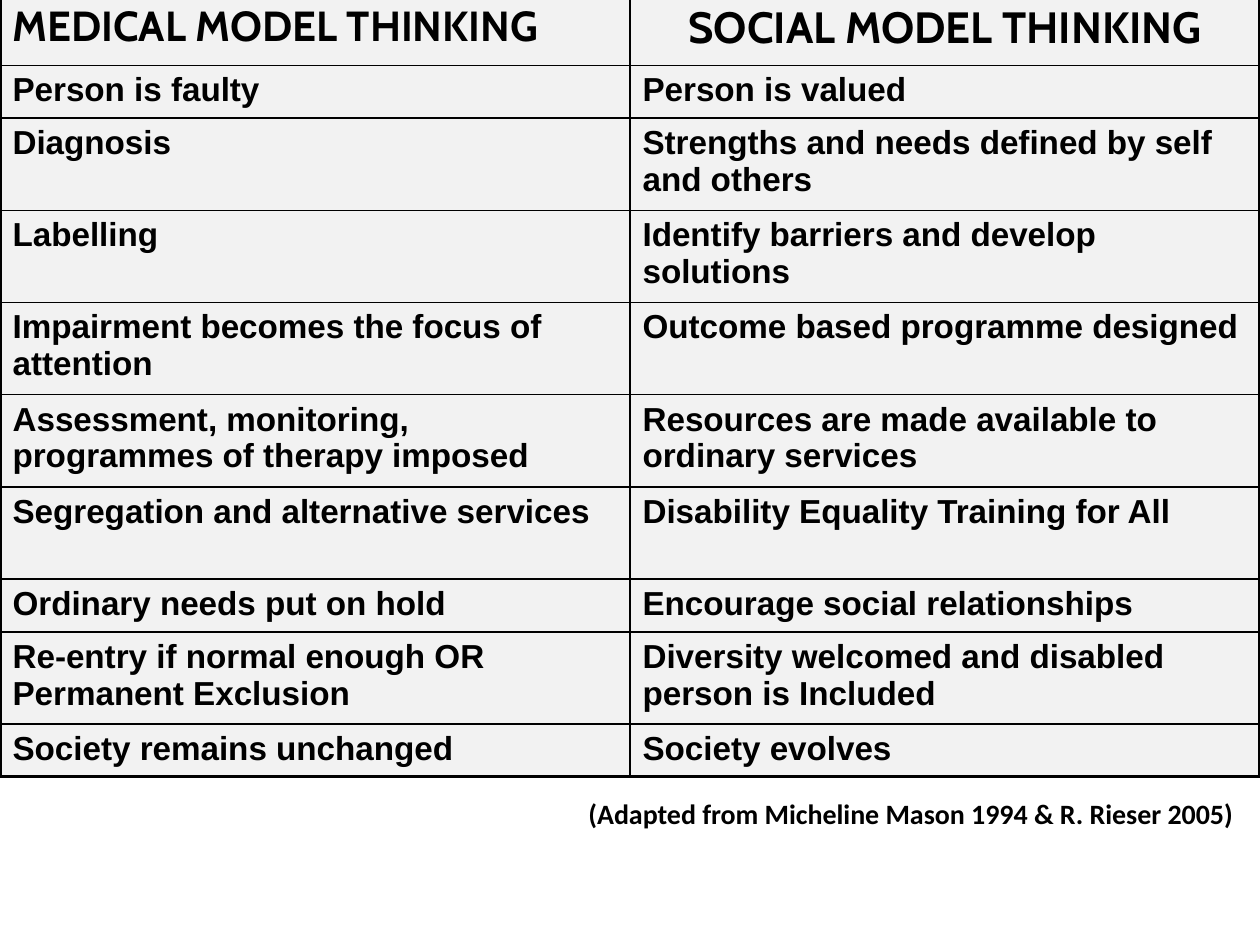
from lxml.etree import SubElement
from pptx import Presentation
from pptx.dml.color import RGBColor
from pptx.enum.text import PP_ALIGN as Align
from pptx.oxml.ns import qn
from pptx.util import Pt

BLACK = "000000"
CELL_FILL = "F2F2F2"
THIN, THICK = 1, 2.25
HEADER_HEIGHT, SINGLE_HEIGHT, DOUBLE_HEIGHT = 40.3, 30.1, 52.7

HEADINGS = ("MEDICAL MODEL THINKING", "SOCIAL MODEL THINKING")
COMPARISONS = [
    ("Person is faulty", "Person is valued", SINGLE_HEIGHT),
    ("Diagnosis", "Strengths and needs defined by self and others", DOUBLE_HEIGHT),
    ("Labelling", "Identify barriers and develop solutions", DOUBLE_HEIGHT),
    ("Impairment becomes the focus of attention", "Outcome based programme designed", DOUBLE_HEIGHT),
    ("Assessment, monitoring, programmes of therapy imposed",
     "Resources are made available to ordinary services", DOUBLE_HEIGHT),
    ("Segregation and alternative services", "Disability Equality Training for All", DOUBLE_HEIGHT),
    ("Ordinary needs put on hold", "Encourage social relationships", SINGLE_HEIGHT),
    ("Re-entry if normal enough OR Permanent Exclusion",
     "Diversity welcomed and disabled person is Included", DOUBLE_HEIGHT),
    ("Society remains unchanged", "Society evolves", SINGLE_HEIGHT),
]


def color(value):
    return RGBColor.from_string(value)


def write(text_frame, text, font="Arial", size=19, align=Align.LEFT):
    text_frame.word_wrap = True
    paragraph = text_frame.paragraphs[0]
    paragraph.alignment = align
    run = paragraph.add_run()
    run.text = text
    run.font.name = font
    run.font.size = Pt(size)
    run.font.bold = True
    run.font.color.rgb = color(BLACK)


def style_cell(cell, **borders):
    properties = cell._tc.get_or_add_tcPr()
    for side in ("L", "R", "T", "B"):
        line = SubElement(properties, qn(f"a:ln{side}"), w=str(Pt(borders.get(side, THIN))))
        SubElement(SubElement(line, qn("a:solidFill")), qn("a:srgbClr"), val=BLACK)
    cell.fill.solid()
    cell.fill.fore_color.rgb = color(CELL_FILL)


def add_comparison_table(slide):
    heights = [HEADER_HEIGHT] + [height for *_, height in COMPARISONS]
    last_row = len(heights) - 1
    table = slide.shapes.add_table(
        len(heights), 2, Pt(0), Pt(-2.9), Pt(720), Pt(sum(heights))).table
    for row, height in zip(table.rows, heights):
        row.height = Pt(height)

    write(table.cell(0, 0).text_frame, HEADINGS[0], font="Cabin", size=24)
    write(table.cell(0, 1).text_frame, HEADINGS[1], font="Cabin", size=25, align=Align.CENTER)
    for row, (medical, social, _) in enumerate(COMPARISONS, 1):
        write(table.cell(row, 0).text_frame, medical)
        write(table.cell(row, 1).text_frame, social)

    for row in range(len(heights)):
        for column, outer_side in enumerate("LR"):
            borders = {outer_side: THICK}
            if row == 0:
                borders["T"] = THICK
            if row == last_row:
                borders["B"] = THICK
            style_cell(table.cell(row, column), **borders)


def add_credit(slide):
    box = slide.shapes.add_textbox(Pt(105), Pt(451.5), Pt(607), Pt(26.6))
    write(box.text_frame, "(Adapted from Micheline Mason 1994 & R. Rieser 2005)",
          font="Calibri", size=16, align=Align.RIGHT)


def main():
    """Build the slide comparing medical and social model thinking."""
    presentation = Presentation()
    presentation.slide_width, presentation.slide_height = Pt(720), Pt(540)
    slide = presentation.slides.add_slide(presentation.slide_layouts[6])
    add_comparison_table(slide)
    add_credit(slide)
    presentation.save("out.pptx")


if __name__ == "__main__":
    main()
